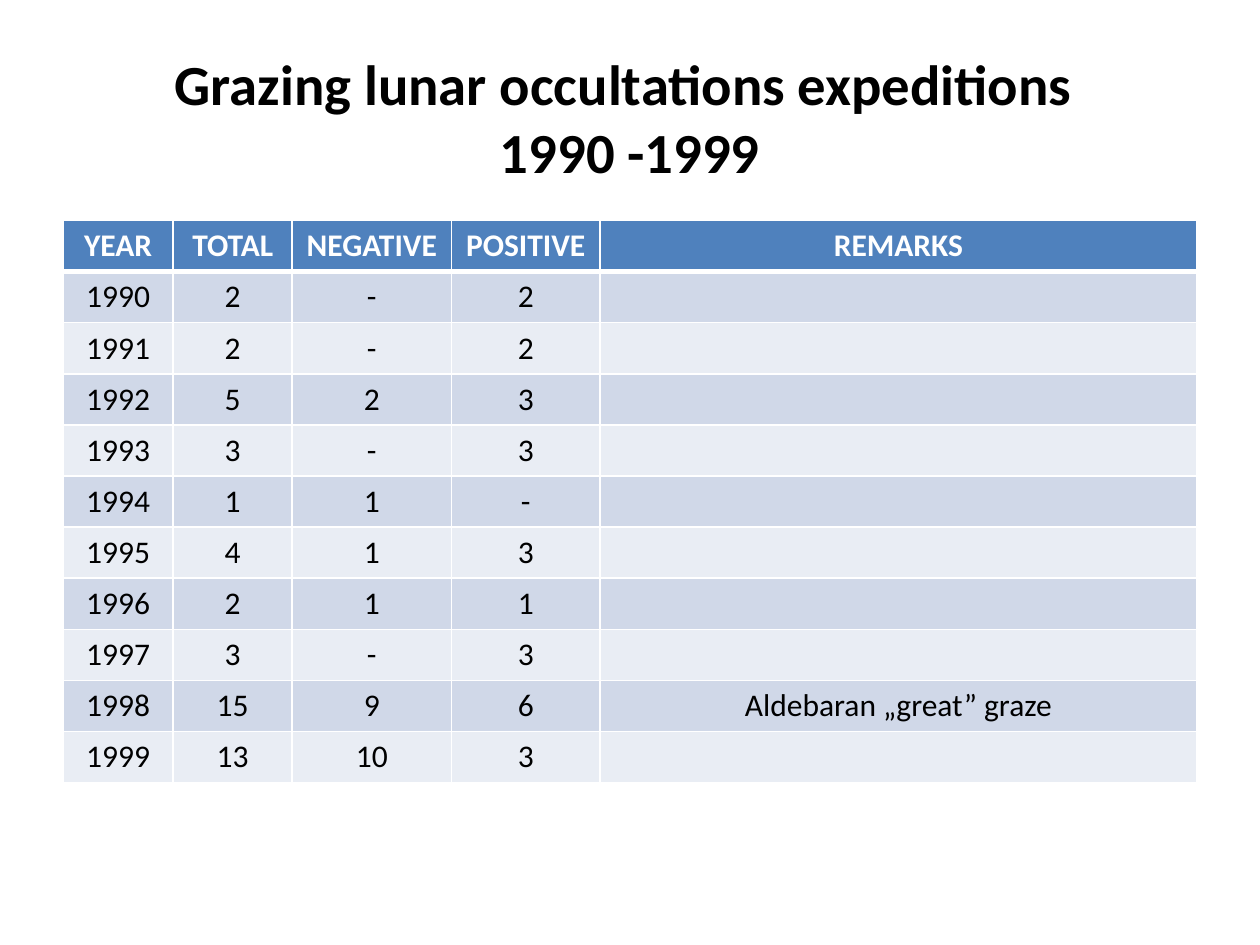
from lxml import etree
from pptx import Presentation
from pptx import util as u
from pptx.dml import color
from pptx.enum import text
from pptx.oxml import ns

HEADERS = ["YEAR", "TOTAL", "NEGATIVE", "POSITIVE", "REMARKS"]
EXPEDITIONS = [
    ["1990", "2", "-", "2", ""],
    ["1991", "2", "-", "2", ""],
    ["1992", "5", "2", "3", ""],
    ["1993", "3", "-", "3", ""],
    ["1994", "1", "1", "-", ""],
    ["1995", "4", "1", "3", ""],
    ["1996", "2", "1", "1", ""],
    ["1997", "3", "-", "3", ""],
    ["1998", "15", "9", "6", "Aldebaran „great” graze"],
    ["1999", "13", "10", "3", ""],
]
COLUMN_WIDTHS = [63, 68, 91, 85, 341]
HEADER_FILL = "4F81BD"
BAND_FILLS = ["E9EDF4", "D0D8E8"]
TITLE_FORMAT = {"size": u.Pt(32.4), "bold": True, "name": "Calibri"}
HEADER_FORMAT = {"size": u.Pt(18), "bold": True, "name": "Calibri"}
BODY_FORMAT = {"size": u.Pt(18), "bold": False, "name": "Calibri"}


def paint(target, hex_color):
    target.rgb = color.RGBColor.from_string(hex_color)


def format_paragraph(paragraph, values, hex_color):
    paragraph.alignment = text.PP_ALIGN.CENTER
    for name, value in values.items():
        setattr(paragraph.font, name, value)
    paint(paragraph.font.color, hex_color)
    for run in paragraph.runs:
        for name, value in values.items():
            setattr(run.font, name, value)
        paint(run.font.color, hex_color)


def add_borders(cell, widths):
    properties = cell._tc.get_or_add_tcPr()
    for side, width in widths.items():
        line = etree.SubElement(properties, ns.qn(f"a:ln{side}"), w=str(u.Pt(width)))
        fill = etree.SubElement(line, ns.qn("a:solidFill"))
        etree.SubElement(fill, ns.qn("a:srgbClr"), val="FFFFFF")


def add_title(slide, left, top, width, height):
    shape = slide.shapes.add_textbox(*map(u.Pt, (left, top, width, height)))
    frame = shape.text_frame
    frame.word_wrap = True
    frame.vertical_anchor = text.MSO_ANCHOR.MIDDLE
    paragraph = frame.paragraphs[0]
    paragraph.text = "Grazing lunar occultations expeditions \v1990 -1999"
    format_paragraph(paragraph, TITLE_FORMAT, "000000")


def add_expedition_table(slide, left, top, width, height):
    rows = [HEADERS] + EXPEDITIONS
    box = map(u.Pt, (left, top, width, height))
    table = slide.shapes.add_table(len(rows), len(HEADERS), *box).table
    for column, column_width in zip(table.columns, COLUMN_WIDTHS):
        column.width = u.Pt(column_width)
    for row_index, values in enumerate(rows):
        table.rows[row_index].height = u.Pt(height / len(rows))
        is_header = row_index == 0
        borders = {
            "L": 1,
            "R": 1,
            "T": 3 if row_index == 1 else 1,
            "B": 3 if is_header else 1,
        }
        for column_index, value in enumerate(values):
            cell = table.cell(row_index, column_index)
            add_borders(cell, borders)
            cell.fill.solid()
            paint(cell.fill.fore_color, HEADER_FILL if is_header else BAND_FILLS[row_index % 2])
            cell.text = value
            format_paragraph(
                cell.text_frame.paragraphs[0],
                HEADER_FORMAT if is_header else BODY_FORMAT,
                "FFFFFF" if is_header else "000000",
            )


def main():
    presentation = Presentation()
    presentation.slide_width, presentation.slide_height = u.Pt(720), u.Pt(540)
    slide = presentation.slides.add_slide(presentation.slide_layouts[6])
    add_title(slide, 36, 21.6, 648, 90)
    add_expedition_table(slide, 36, 126, 648, 321.2)
    presentation.save("out.pptx")


if __name__ == "__main__":
    main()
